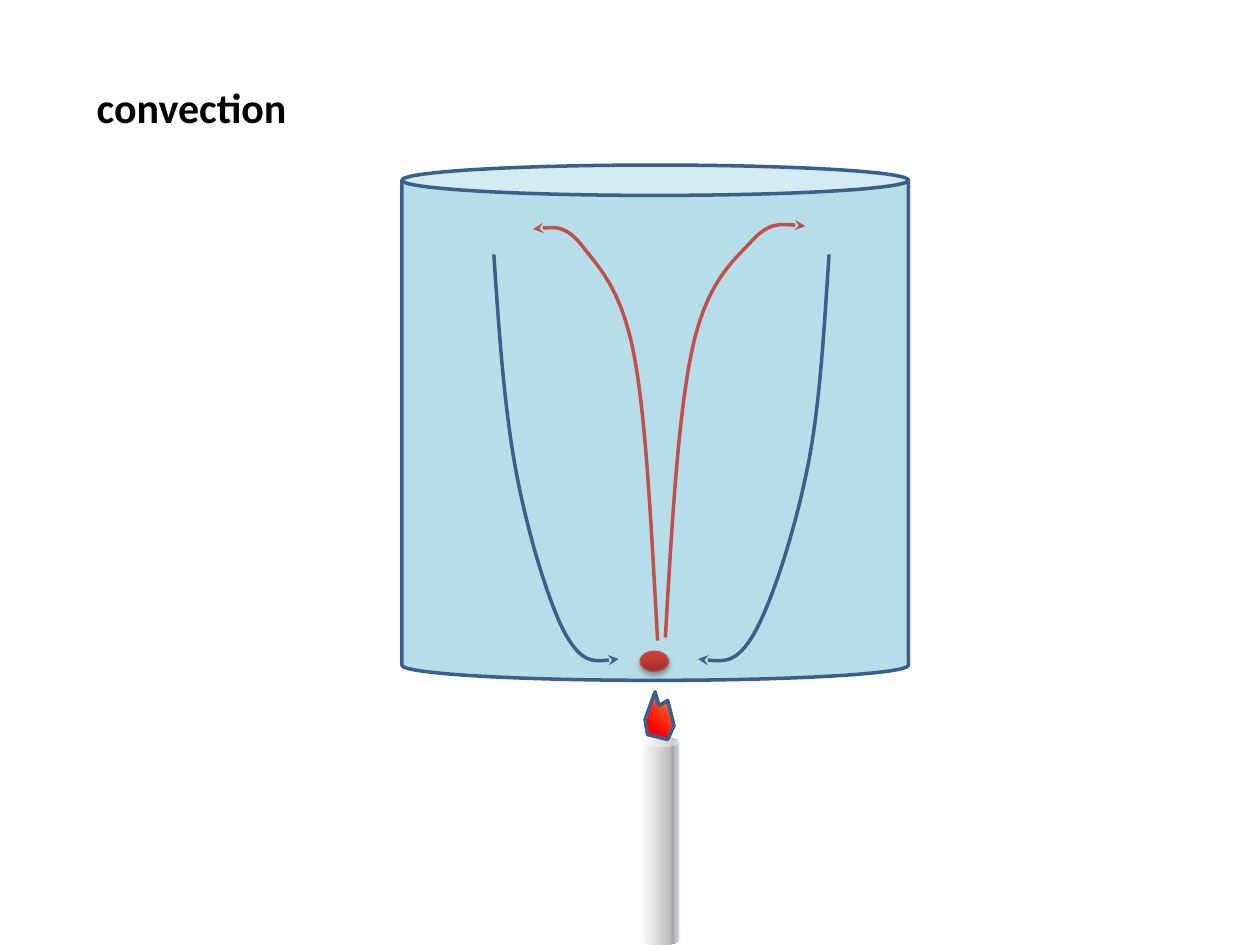
from lxml import etree
from pptx import Presentation, util as u
from pptx.dml.color import RGBColor
from pptx.enum import shapes, text
from pptx.oxml.ns import qn

THEME = {
    "font": "Calibri", "title_size": 24, "text": "000000",
    "water": "B7DEE8", "cold": "3A5F8C", "warm": "C0504D",
    "spot_line": "BF4C48", "line": 2, "thin": 0.75, "shadow": "000000",
    "candle": [(0, "FFFFFF"), (74, "BFBFBF"), (83, "A6A6A6"), (100, "CAD9EB")],
    "flame": [(0, "F79646"), (74, "FF0000"), (83, "FF0000"), (100, "CAD9EB")],
    "spot": [(0, "9C2F2D"), (80, "CB3E3A"), (100, "CE3B37")],
}

TITLE = ("convection", (48.2, 43.2, 317.5, 36))
BEAKER = (229.7, 94.3, 289.4, 294.5)
CANDLE = (365.8, 421.2, 22.3, 118.8)
HOT_SPOT = (365.8, 372.2, 16.2, 11.5)
FLAME = [(370.1, 419.8), (381.6, 422.6), (385.2, 414.7), (381.6, 400.3),
         (376.6, 403.2), (374.4, 395.3), (368.6, 411.1)]
CURRENTS = [
    ("warm", [(380.2, 364.3), (383.8, 301), (387.4, 238.3), (395.3, 200.9),
              (403.2, 162.7), (417.6, 150.5), (428.4, 139),
              (439.2, 126.7), (449.3, 128.2), (460.1, 129.2)]),
    ("warm", [(375.8, 366.1), (372.2, 303.1), (369.4, 239.8), (362.2, 202.3),
              (355, 164.9), (342, 152.6), (332.6, 140.4),
              (323.3, 128.9), (313.9, 129.6), (304.6, 131)]),
    ("cold", [(473.8, 145.4), (470.9, 188.6), (468.7, 231.1), (461.5, 267.1),
              (454.3, 303.1), (441.4, 343.4), (431.3, 361.4),
              (421.2, 379.4), (409.7, 378), (398.9, 376.6)]),
    ("cold", [(282.2, 145.4), (285.1, 188.6), (288, 231.1), (294.5, 267.1),
              (301, 303.1), (313.2, 343.4), (322.6, 361.4),
              (332.6, 379.4), (342.7, 378), (353.5, 376.6)]),
]


def pts(values):
    return [u.Pt(v) for v in values]


def rgb(value):
    return RGBColor.from_string(value)


def outline(sp, color, width):
    sp.line.color.rgb = rgb(color)
    sp.line.width = u.Pt(width)


def gradient(sp, stops, angle):
    sp.fill.gradient()
    sp.fill.gradient_angle = -angle % 360
    stop_list = sp._element.spPr.find(".//" + qn("a:gsLst"))
    for old in list(stop_list):
        stop_list.remove(old)
    for position, color in stops:
        stop = etree.SubElement(stop_list, qn("a:gs"), pos=str(position * 1000))
        etree.SubElement(stop, qn("a:srgbClr"), val=color)


def add_preset(slide, kind, box):
    sp = slide.shapes.add_shape(kind, *pts(box))
    sp.shadow.inherit = False
    return sp


def add_outline(slide, points, close):
    builder = slide.shapes.build_freeform(*pts(points[0]), scale=1.0)
    builder.add_line_segments([pts(p) for p in points[1:]], close=close)
    sp = builder.convert_to_shape()
    sp.shadow.inherit = False
    return sp


def add_current(slide, color, points):
    sp = add_outline(slide, points, False)
    sp.fill.background()
    outline(sp, color, THEME["line"])
    segments = sp._element.spPr.findall(".//" + qn("a:lnTo"))
    geom = segments[0].getparent()
    for i in range(0, len(segments), 3):
        curve = etree.SubElement(geom, qn("a:cubicBezTo"))
        for segment in segments[i:i + 3]:
            curve.append(segment[0])
            geom.remove(segment)
    etree.SubElement(sp.line._get_or_add_ln(), qn("a:tailEnd"), type="stealth")


def add_shadow(sp, blur, distance, angle, alpha):
    effects = sp._element.spPr.find(qn("a:effectLst"))
    shadow = etree.SubElement(
        effects, qn("a:outerShdw"), blurRad=str(u.Pt(blur)), dist=str(u.Pt(distance)),
        dir=str(angle * 60000), rotWithShape="0")
    color = etree.SubElement(shadow, qn("a:srgbClr"), val=THEME["shadow"])
    etree.SubElement(color, qn("a:alpha"), val=str(alpha * 1000))


def main():
    prs = Presentation()
    prs.slide_width, prs.slide_height = pts((720, 540))
    slide = prs.slides.add_slide(prs.slide_layouts[6])

    words, box = TITLE
    tf = slide.shapes.add_textbox(*pts(box)).text_frame
    tf.word_wrap = True
    tf.auto_size = text.MSO_AUTO_SIZE.SHAPE_TO_FIT_TEXT
    p = tf.paragraphs[0]
    p.text = words
    p.font.name = THEME["font"]
    p.font.size = u.Pt(THEME["title_size"])
    p.font.bold = True
    p.font.color.rgb = rgb(THEME["text"])

    beaker = add_preset(slide, shapes.MSO_SHAPE.CAN, BEAKER)
    beaker.adjustments[0] = 0.06
    beaker.fill.solid()
    beaker.fill.fore_color.rgb = rgb(THEME["water"])
    outline(beaker, THEME["cold"], THEME["line"])

    candle = add_preset(slide, shapes.MSO_SHAPE.CAN, CANDLE)
    gradient(candle, THEME["candle"], 0)
    candle.line.fill.background()

    flame = add_outline(slide, FLAME, True)
    gradient(flame, THEME["flame"], 135)
    outline(flame, THEME["cold"], THEME["line"])

    spot = add_preset(slide, shapes.MSO_SHAPE.OVAL, HOT_SPOT)
    gradient(spot, THEME["spot"], 270)
    outline(spot, THEME["spot_line"], THEME["thin"])
    add_shadow(spot, 3.1, 1.8, 90, 35)

    for tone, points in CURRENTS:
        add_current(slide, THEME[tone], points)

    prs.save("out.pptx")


if __name__ == "__main__":
    main()
